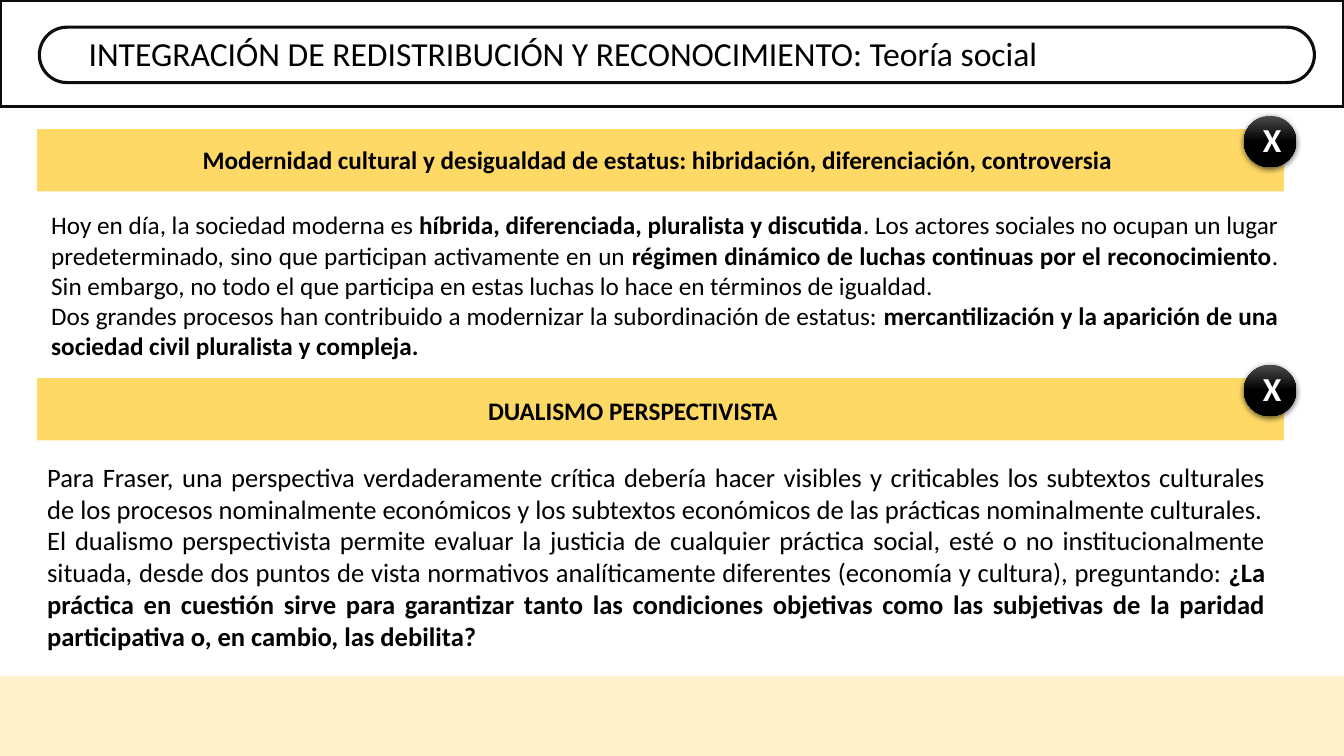
from dataclasses import dataclass

from lxml import etree
from pptx import Presentation
from pptx.dml.color import RGBColor
from pptx.enum import shapes, text
from pptx.oxml import ns
from pptx.util import Pt


@dataclass(frozen=True)
class Theme:
    """Colours, font and type sizes of the slide."""
    font: str = "Calibri"
    ink: str = "000000"
    white: str = "FFFFFF"
    outline: str = "0D0D0D"
    band: str = "FFD966"
    footer: str = "FFF2CC"
    badge_top: str = "4B4B4B"
    title: float = 24
    body: float = 18
    large_body: float = 19
    line: float = 2.25


THEME = Theme()
SHAPE = shapes.MSO_SHAPE
ALIGN = text.PP_ALIGN

MODERNITY = [
    [("Hoy en día, la sociedad moderna es ", False),
     ("híbrida, diferenciada, pluralista y discutida", True),
     (". Los actores sociales no ocupan un lugar predeterminado, sino que participan "
      "activamente en un ", False),
     ("régimen dinámico de luchas continuas por el reconocimiento", True),
     (". Sin embargo, no todo el que participa en estas luchas lo hace en términos de "
      "igualdad.", False)],
    [("Dos grandes procesos han contribuido a modernizar la subordinación de estatus: ", False),
     ("mercantilización y la aparición de una sociedad civil pluralista y compleja.", True)],
]
DUALISM = [
    [("Para Fraser, una perspectiva verdaderamente crítica debería hacer visibles y "
      "criticables los subtextos culturales de los procesos nominalmente económicos y los "
      "subtextos económicos de las prácticas nominalmente culturales.", False)],
    [("El dualismo perspectivista permite evaluar la justicia de cualquier práctica social, "
      "esté o no institucionalmente situada, desde dos puntos de vista normativos "
      "analíticamente diferentes (economía y cultura), preguntando: ", False),
     ("¿La práctica en cuestión sirve para garantizar tanto las condiciones objetivas como "
      "las subjetivas de la paridad participativa o, en cambio, las debilita?", True)],
]


def rgb(value):
    """Return the colour for a hex value."""
    return RGBColor.from_string(value)


def add_panel(s, box, fill, outlined=False, kind=SHAPE.RECTANGLE):
    """Add a flat filled shape, with the dark outline if asked."""
    sp = s.shapes.add_shape(kind, *map(Pt, box))
    sp.shadow.inherit = False
    sp.fill.solid()
    sp.fill.fore_color.rgb = rgb(fill)
    if outlined:
        sp.line.color.rgb = rgb(THEME.outline)
        sp.line.width = Pt(THEME.line)
    else:
        sp.line.fill.background()
    return sp


def add_text(s, box, paragraphs, size, align=ALIGN.LEFT, color=THEME.ink):
    """Add a text box from paragraphs of (words, bold) runs."""
    tf = s.shapes.add_textbox(*map(Pt, box)).text_frame
    tf.word_wrap = True
    for i, runs in enumerate(paragraphs):
        p = tf.add_paragraph() if i else tf.paragraphs[0]
        p.alignment = align
        p.font.name = THEME.font
        p.font.size = Pt(size)
        p.font.color.rgb = rgb(color)
        for words, bold in runs:
            r = p.add_run()
            r.text = words
            r.font.bold = bold


def add_shadow(sp):
    """Give a shape a soft black shadow below it."""
    sp.shadow.inherit = False
    effects = sp._element.spPr.find(ns.qn("a:effectLst"))
    shadow = etree.SubElement(effects, ns.qn("a:outerShdw"), blurRad=str(Pt(4.5)),
                              dist=str(Pt(1.5)), dir="5400000", rotWithShape="0")
    color = etree.SubElement(shadow, ns.qn("a:srgbClr"), val=THEME.ink)
    etree.SubElement(color, ns.qn("a:alpha"), val="63000")


def add_badge(s, left, top):
    """Add a glossy black disc marked with an X."""
    sp = s.shapes.add_shape(SHAPE.OVAL, Pt(left), Pt(top), Pt(37.4), Pt(36.7))
    sp.line.fill.background()
    sp.fill.gradient()
    sp.fill.gradient_angle = 270
    stops = zip(sp.fill.gradient_stops, (THEME.badge_top, THEME.ink), (0, 0.5))
    for stop, color, position in stops:
        stop.color.rgb = rgb(color)
        stop.position = position
    add_shadow(sp)
    add_text(s, (left + 6.5, top - 1.5, 22.3, 36), [[("X", True)]],
             THEME.title, color=THEME.white)


def add_heading(s, top, words, words_box):
    """Add a yellow band with its heading and badge."""
    add_panel(s, (26.6, top, 890.6, 44.6), THEME.band)
    add_text(s, words_box, [[(words, True)]], THEME.body, ALIGN.CENTER)
    add_badge(s, 888.5, top - 9.4)


def add_title(s, words):
    """Add the framed header with its rounded title bar."""
    add_panel(s, (0, 0, 960, 76.3), THEME.white, outlined=True)
    bar = add_panel(s, (28.1, 19.4, 910.8, 39.6), THEME.white, outlined=True,
                    kind=SHAPE.ROUNDED_RECTANGLE)
    bar.adjustments[0] = 0.5
    add_text(s, (56.2, 20.2, 882, 36), [[(words, False)]], THEME.title)


def main():
    """Build the slide and save it."""
    prs = Presentation()
    prs.slide_width, prs.slide_height = Pt(960), Pt(540)
    s = prs.slides.add_slide(prs.slide_layouts[6])
    add_title(s, "INTEGRACIÓN DE REDISTRIBUCIÓN Y RECONOCIMIENTO: Teoría social")
    add_panel(s, (0, 483, 960, 57), THEME.footer)
    add_heading(s, 92.2, "Modernidad cultural y desigualdad de estatus: hibridación, "
                "diferenciación, controversia", (58.3, 99.4, 823, 29))
    add_text(s, (29.5, 146.2, 890.6, 116.6), MODERNITY, THEME.body, ALIGN.JUSTIFY)
    add_heading(s, 270, "DUALISMO PERSPECTIVISTA", (26.6, 278.6, 851, 29))
    add_text(s, (26.6, 325.4, 884.2, 145.4), DUALISM, THEME.large_body, ALIGN.JUSTIFY)
    prs.save("out.pptx")


if __name__ == "__main__":
    main()
